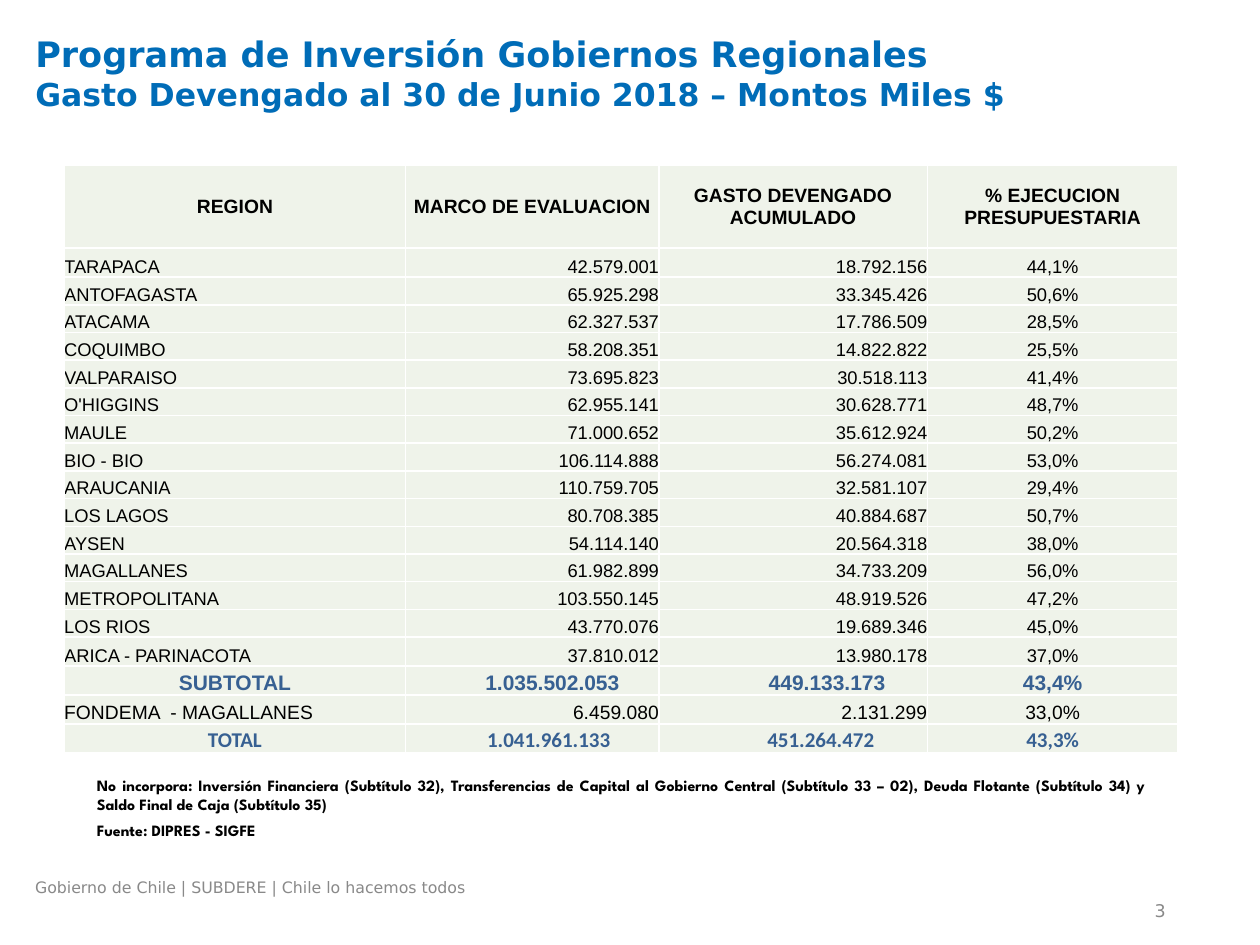
from lxml import etree
from pptx import Presentation
from pptx import util as u
from pptx.dml.color import RGBColor
from pptx.enum import text
from pptx.oxml.ns import qn

BLUE = RGBColor(0x00, 0x6C, 0xB7)
TOTAL_BLUE = RGBColor(0x37, 0x60, 0x92)
GRAY = RGBColor(0x89, 0x89, 0x89)
BLACK = RGBColor(0, 0, 0)
CELL_FILL = RGBColor(0xEF, 0xF3, 0xEA)
BORDER_HEX = "FFFFFF"

LEFT, CENTER, RIGHT, JUSTIFY = (
    text.PP_ALIGN.LEFT, text.PP_ALIGN.CENTER,
    text.PP_ALIGN.RIGHT, text.PP_ALIGN.JUSTIFY)
TOP, MIDDLE, BOTTOM = (
    text.MSO_ANCHOR.TOP, text.MSO_ANCHOR.MIDDLE, text.MSO_ANCHOR.BOTTOM)

COLUMN_WIDTHS = [2.71, 2.01, 2.13, 1.99]
HEADER_HEIGHT, ROW_HEIGHT, TALL_ROW_HEIGHT = 0.66, 0.22, 0.23
BODY_ALIGNMENTS = [LEFT, RIGHT, RIGHT, CENTER]

HEADERS = ["REGION", "MARCO DE EVALUACION", "GASTO DEVENGADO ACUMULADO",
           "% EJECUCION PRESUPUESTARIA"]
REGIONS = [
    ("TARAPACA", "42.579.001", "18.792.156", "44,1%"),
    ("ANTOFAGASTA", "65.925.298", "33.345.426", "50,6%"),
    ("ATACAMA", "62.327.537", "17.786.509", "28,5%"),
    ("COQUIMBO", "58.208.351", "14.822.822", "25,5%"),
    ("VALPARAISO", "73.695.823", "30.518.113", "41,4%"),
    ("O'HIGGINS", "62.955.141", "30.628.771", "48,7%"),
    ("MAULE", "71.000.652", "35.612.924", "50,2%"),
    ("BIO - BIO", "106.114.888", "56.274.081", "53,0%"),
    ("ARAUCANIA", "110.759.705", "32.581.107", "29,4%"),
    ("LOS LAGOS", "80.708.385", "40.884.687", "50,7%"),
    ("AYSEN", "54.114.140", "20.564.318", "38,0%"),
    ("MAGALLANES", "61.982.899", "34.733.209", "56,0%"),
    ("METROPOLITANA", "103.550.145", "48.919.526", "47,2%"),
    ("LOS RIOS", "43.770.076", "19.689.346", "45,0%"),
    ("ARICA - PARINACOTA", "37.810.012", "13.980.178", "37,0%"),
]
SUBTOTAL = ("SUBTOTAL", "1.035.502.053", "449.133.173", "43,4%")
FONDEMA = ("FONDEMA  - MAGALLANES", "6.459.080", "2.131.299", "33,0%")
TOTAL = ("TOTAL", "1.041.961.133", "451.264.472", "43,3%")
NOTES = [
    "No incorpora: Inversión Financiera (Subtítulo 32), Transferencias de "
    "Capital al Gobierno Central (Subtítulo 33 – 02), Deuda Flotante "
    "(Subtítulo 34) y Saldo Final de Caja (Subtítulo 35)",
    "Fuente: DIPRES - SIGFE",
]


def set_font(font, name, size, color, bold=False):
    font.name = name
    font.size = u.Pt(size)
    font.color.rgb = color
    font.bold = bold


def fill_title(shape):
    shape.left, shape.top = u.Inches(0.18), u.Inches(0.21)
    shape.width, shape.height = u.Inches(9.62), u.Inches(0.94)
    frame = shape.text_frame
    frame.auto_size = text.MSO_AUTO_SIZE.NONE
    frame.vertical_anchor = TOP
    paragraph = frame.paragraphs[0]
    paragraph.alignment = LEFT
    heading = paragraph.add_run()
    heading.text = "Programa de Inversión Gobiernos Regionales"
    set_font(heading.font, "DejaVu Sans", 20, BLUE, True)
    paragraph.add_line_break()
    subheading = paragraph.add_run()
    subheading.text = "Gasto Devengado al 30 de Junio 2018 – Montos Miles $"
    set_font(subheading.font, "DejaVu Sans", 18, BLUE, True)


def add_text(slide, box, lines, font, alignments, anchor=TOP):
    shape = slide.shapes.add_textbox(*map(u.Inches, box))
    frame = shape.text_frame
    frame.word_wrap = True
    frame.vertical_anchor = anchor
    for index, (line, alignment) in enumerate(zip(lines, alignments)):
        paragraph = frame.add_paragraph() if index else frame.paragraphs[0]
        paragraph.text = line
        paragraph.alignment = alignment
        if index:
            paragraph.space_before = u.Pt(4)
        set_font(paragraph.font, *font)


def add_borders(cell):
    properties = cell._tc.get_or_add_tcPr()
    for side in ("a:lnL", "a:lnR", "a:lnT", "a:lnB"):
        line = etree.SubElement(properties, qn(side), w=str(u.Pt(1)))
        fill = etree.SubElement(line, qn("a:solidFill"))
        etree.SubElement(fill, qn("a:srgbClr"), val=BORDER_HEX)


def fill_row(row, values, font, alignments=BODY_ALIGNMENTS, anchor=BOTTOM,
             indents=(0, 0, 0, 0)):
    for cell, value, alignment, indent in zip(
            row.cells, values, alignments, indents):
        add_borders(cell)
        cell.fill.solid()
        cell.fill.fore_color.rgb = CELL_FILL
        cell.margin_left = u.Inches(indent)
        cell.margin_right = cell.margin_top = cell.margin_bottom = 0
        cell.vertical_anchor = anchor
        paragraph = cell.text_frame.paragraphs[0]
        paragraph.text = value
        paragraph.alignment = alignment
        set_font(paragraph.font, *font)


def add_budget_table(slide):
    region_heights = [ROW_HEIGHT] * len(REGIONS)
    region_heights[0] = region_heights[-1] = TALL_ROW_HEIGHT
    heights = [HEADER_HEIGHT, *region_heights] + [TALL_ROW_HEIGHT] * 3
    table = slide.shapes.add_table(
        len(heights), len(COLUMN_WIDTHS), u.Inches(0.51), u.Inches(1.31),
        u.Inches(sum(COLUMN_WIDTHS)), u.Inches(sum(heights))).table
    table.first_row = table.horz_banding = False
    for column, width in zip(table.columns, COLUMN_WIDTHS):
        column.width = u.Inches(width)
    for row, height in zip(table.rows, heights):
        row.height = u.Inches(height)

    # Header, regions, then the closing rows
    rows = iter(table.rows)
    centered = [CENTER] * len(COLUMN_WIDTHS)
    fill_row(next(rows), HEADERS, ("Arial", 11, BLACK, True), centered, MIDDLE)
    for region in REGIONS:
        fill_row(next(rows), region, ("Arial", 10.5, BLACK))
    fill_row(next(rows), SUBTOTAL, ("Arial", 12, TOTAL_BLUE, True), centered,
             indents=(0, 0.32, 0.54, 0))
    fill_row(next(rows), FONDEMA, ("Arial", 11, BLACK))
    fill_row(next(rows), TOTAL, ("Calibri", 12, TOTAL_BLUE, True), centered,
             indents=(0, 0.26, 0.44, 0))


def main():
    presentation = Presentation()
    presentation.slide_width = u.Inches(10)
    presentation.slide_height = u.Inches(7.5)
    slide = presentation.slides.add_slide(presentation.slide_layouts[5])

    fill_title(slide.shapes.title)
    add_budget_table(slide)

    # Notes below the table
    add_text(slide, (0.67, 6.11, 8.51, 0.63), NOTES,
             ("League Spartan", 9, BLACK, True), [JUSTIFY, LEFT])

    # Footer and page number
    add_text(slide, (0.18, 6.92, 6.48, 0.27),
             ["Gobierno de Chile | SUBDERE | Chile lo hacemos todos"],
             ("DejaVu Sans", 9, GRAY), [LEFT])
    add_text(slide, (7.02, 7.12, 2.33, 0.21), ["3"],
             ("DejaVu Sans", 10, GRAY), [RIGHT], MIDDLE)

    presentation.save("out.pptx")


if __name__ == "__main__":
    main()
